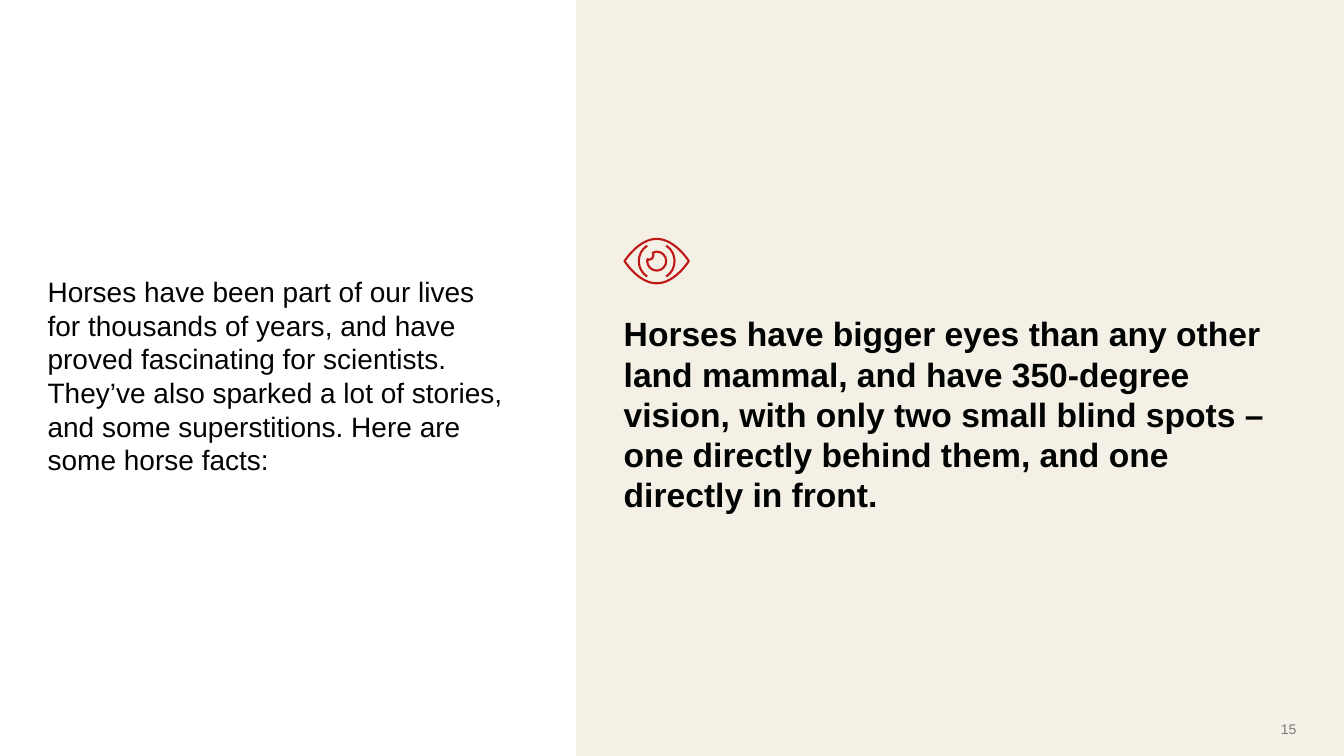
from lxml import etree
from pptx import Presentation
from pptx import util as u
from pptx.dml.color import RGBColor
from pptx.enum import shapes, text
from pptx.oxml import ns

CREAM = RGBColor(0xF4, 0xF0, 0xE5)
INK = RGBColor(0x01, 0x03, 0x02)
GREY = RGBColor(0x79, 0x79, 0x79)
RED = RGBColor(0xBF, 0x17, 0x16)

INTRO = ("Horses have been part of our lives \vfor thousands of years, and have "
         "proved fascinating for scientists. They’ve also sparked a lot of "
         "stories, and some superstitions. Here are some horse facts:")
FACT = ("Horses have bigger eyes than any other land mammal, and have 350-degree "
        "vision, with only two small blind spots – one directly behind them, "
        "and one directly in front.")

# Eye curves in cm from the eye centre: a start point, then Bezier segments
EYE_CENTRE = (16.55, 6.58)
EYELIDS = [(0.81, 0),
           (0.81, 0), (0.46, 0.56), (0, 0.56),
           (-0.46, 0.56), (-0.81, 0), (-0.81, 0),
           (-0.81, 0), (-0.46, -0.56), (0, -0.56),
           (0.46, -0.56), (0.81, 0), (0.81, 0)]
PUPIL = [(0, -0.24),
         (-0.04, -0.24), (-0.07, -0.23), (-0.1, -0.21),
         (-0.08, -0.19), (-0.08, -0.17), (-0.08, -0.15),
         (-0.08, -0.08), (-0.13, -0.03), (-0.2, -0.03),
         (-0.21, -0.03), (-0.22, -0.04), (-0.23, -0.05),
         (-0.24, -0.03), (-0.24, -0.01), (-0.24, 0),
         (-0.24, 0.13), (-0.13, 0.24), (0, 0.24),
         (0.13, 0.24), (0.24, 0.13), (0.24, 0),
         (0.24, -0.13), (0.13, -0.24), (0, -0.24)]
RIGHT_IRIS = [(0.24, 0.39),
              (0.38, 0.3), (0.45, 0.15), (0.45, 0),
              (0.45, -0.15), (0.38, -0.3), (0.24, -0.39)]
LEFT_IRIS = [(-x, y) for x, y in reversed(RIGHT_IRIS)]


def set_format(target, values):
    for name, value in values.items():
        setattr(target, name, value)


def add_panel(slide, left, top, width, height, colour):
    panel = slide.shapes.add_shape(
        shapes.MSO_SHAPE.RECTANGLE, u.Cm(left), u.Cm(top), u.Cm(width), u.Cm(height))
    panel.shadow.inherit = False
    panel.fill.solid()
    panel.fill.fore_color.rgb = colour
    panel.line.fill.background()


def add_text(slide, left, top, width, height, words, size, colour,
             bold=False, align=text.PP_ALIGN.LEFT, anchor=text.MSO_ANCHOR.TOP):
    box = slide.shapes.add_textbox(u.Cm(left), u.Cm(top), u.Cm(width), u.Cm(height))
    set_format(box.text_frame, {
        "word_wrap": True, "auto_size": text.MSO_AUTO_SIZE.SHAPE_TO_FIT_TEXT,
        "vertical_anchor": anchor, "margin_left": 0, "margin_top": 0,
        "margin_right": 0, "margin_bottom": 0})
    paragraph = box.text_frame.paragraphs[0]
    paragraph.text = words
    set_format(paragraph, {"alignment": align, "line_spacing": u.Pt(1.2 * size)})
    for run in paragraph.runs:
        set_format(run.font, {"name": "Arial", "size": u.Pt(size), "bold": bold})
        run.font.color.rgb = colour


def bend_segments(outline):
    """Turn each three line segments into one cubic Bezier segment."""
    lines = list(outline.element.iter(ns.qn("a:lnTo")))
    for i in range(0, len(lines), 3):
        bezier = etree.Element(ns.qn("a:cubicBezTo"))
        lines[i].addprevious(bezier)
        for line in lines[i:i + 3]:
            bezier.append(line[0])
            line.getparent().remove(line)


def add_curve(slide, curve):
    points = [(u.Cm(EYE_CENTRE[0] + x), u.Cm(EYE_CENTRE[1] + y)) for x, y in curve]
    builder = slide.shapes.build_freeform(*points[0])
    builder.add_line_segments(points[1:], close=False)
    if curve[0] == curve[-1]:
        builder.add_line_segments([], close=True)
    outline = builder.convert_to_shape()
    bend_segments(outline)
    outline.shadow.inherit = False
    outline.fill.background()
    outline.line.color.rgb = RED
    outline.line.width = u.Pt(1.5)


def main():
    presentation = Presentation()
    set_format(presentation, {"slide_width": u.Cm(33.87), "slide_height": u.Cm(19.05)})
    slide = presentation.slides.add_slide(presentation.slide_layouts[6])

    # Right-hand panel
    add_panel(slide, 14.52, 0, 19.35, 19.05, CREAM)

    # Introduction and fact
    add_text(slide, 1.2, 6.92, 12.12, 4.27, INTRO, 20, INK)
    add_text(slide, 15.72, 7.89, 16.94, 4.11, FACT, 24, INK, bold=True)

    # Eye icon
    for curve in (EYELIDS, PUPIL, RIGHT_IRIS, LEFT_IRIS):
        add_curve(slide, curve)

    # Slide number
    add_text(slide, 30.51, 18.15, 2.16, 0.43, "15", 10, GREY,
             align=text.PP_ALIGN.RIGHT, anchor=text.MSO_ANCHOR.MIDDLE)

    presentation.save("out.pptx")


if __name__ == "__main__":
    main()
